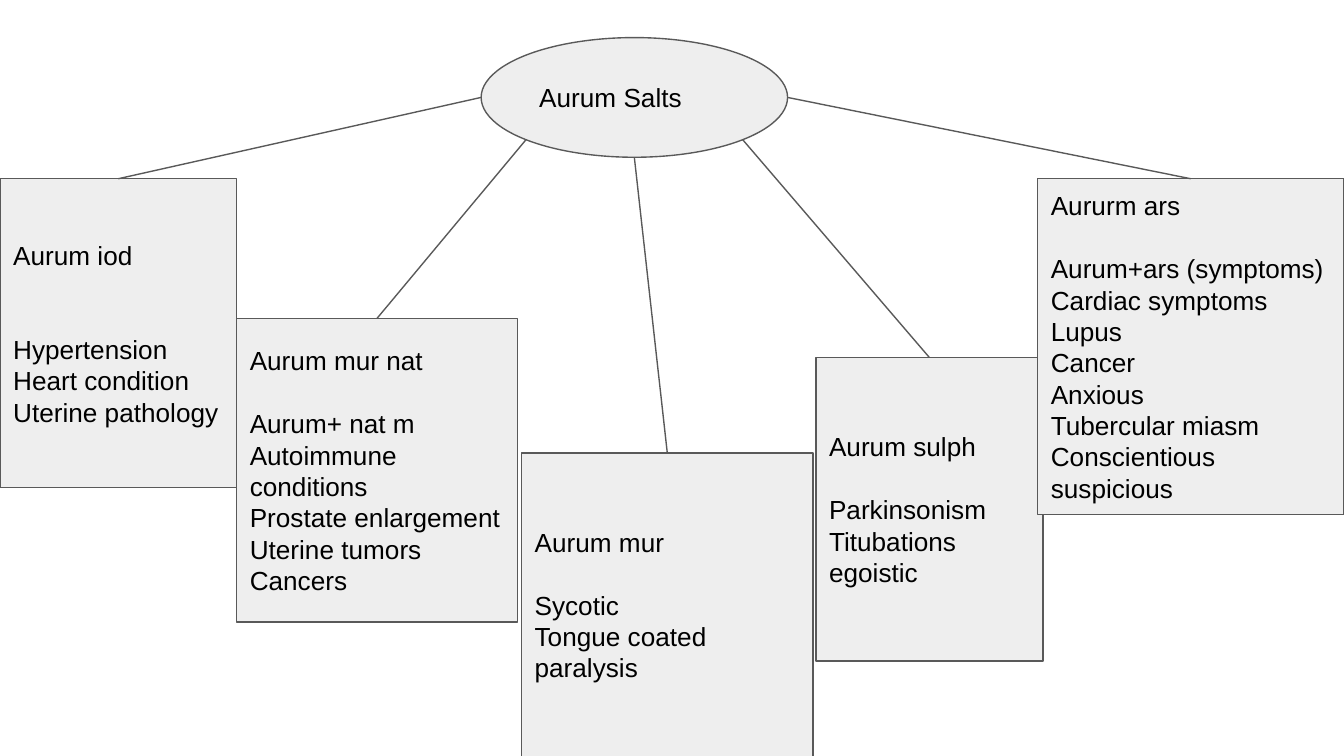
from math import cos, radians, sin

from lxml import etree
from pptx import Presentation
from pptx.dml.color import RGBColor
from pptx.enum.shapes import MSO_CONNECTOR as Connector, MSO_SHAPE as Shape
from pptx.enum.text import MSO_ANCHOR as Anchor, PP_ALIGN as Align
from pptx.oxml.ns import qn
from pptx.util import Inches, Pt

SLIDE_WIDTH = 10
SLIDE_HEIGHT = SLIDE_WIDTH * 9 / 16
COLORS = {"fill": "EEEEEE", "line": "595959", "text": "000000"}
FONT, FONT_SIZE, LINE_HEIGHT = "Arial", 14, 16.8

TOPIC = ("Aurum Salts", (3.58, 0.28, 2.28, 0.89))
SALTS = [
    ("Aurum iod", 2, (0, 1.33, 1.76, 2.3),
     ["Hypertension", "Heart condition", "Uterine pathology"]),
    ("Aurum mur nat", 1, (1.76, 2.37, 2.09, 2.26),
     ["Aurum+ nat m", "Autoimmune conditions", "Prostate enlargement",
      "Uterine tumors", "Cancers"]),
    ("Aurum mur", 1, (3.88, 3.37, 2.17, 2.26),
     ["Sycotic", "Tongue coated", "paralysis"]),
    ("Aurum sulph", 1, (6.07, 2.66, 1.69, 2.26),
     ["Parkinsonism", "Titubations", "egoistic"]),
    ("Aururm ars", 1, (7.72, 1.33, 2.28, 2.5),
     ["Aurum+ars (symptoms)", "Cardiac symptoms", "Lupus", "Cancer", "Anxious",
      "Tubercular miasm", "Conscientious", "suspicious"]),
]


def color(name):
    return RGBColor.from_string(COLORS[name])


def style_line(line):
    line.color.rgb = color("line")
    line.width = Pt(0.75)


def add_node(slide, kind, place, lines, gap=0):
    node = slide.shapes.add_shape(kind, *map(Inches, place))
    node.shadow.inherit = False
    node.fill.solid()
    node.fill.fore_color.rgb = color("fill")
    style_line(node.line)
    frame = node.text_frame
    frame.word_wrap = True
    frame.vertical_anchor = Anchor.MIDDLE
    frame.margin_left = frame.margin_right = Inches(0.1)
    frame.margin_top = frame.margin_bottom = Inches(0.1)
    frame.text = "\n".join(lines)
    for paragraph in frame.paragraphs:
        paragraph.alignment = Align.LEFT
        font = paragraph.runs[0].font
        font.name, font.size = FONT, Pt(FONT_SIZE)
        font.color.rgb = color("text")
    if gap:
        frame.paragraphs[0].space_after = Pt(gap * LINE_HEIGHT)


def add_branch(slide, start, end):
    branch = slide.shapes.add_connector(Connector.STRAIGHT, *map(Inches, start + end))
    style_line(branch.line)
    etree.SubElement(branch.element.find(qn("p:spPr")), qn("a:effectLst"))


def main():
    deck = Presentation()
    deck.slide_width, deck.slide_height = Inches(SLIDE_WIDTH), Inches(SLIDE_HEIGHT)
    slide = deck.slides.add_slide(deck.slide_layouts[6])

    topic, topic_place = TOPIC
    left, top, width, height = topic_place
    add_node(slide, Shape.OVAL, topic_place, [topic])
    for salt, gap, place, symptoms in SALTS:
        add_node(slide, Shape.RECTANGLE, place, [salt] + symptoms, gap)

    step = 180 / (len(SALTS) - 1)
    for i, (_, _, (x, y, w, _), _) in enumerate(SALTS):
        angle = radians(180 - i * step)
        start = (left + width / 2 * (1 + cos(angle)),
                 top + height / 2 * (1 + sin(angle)))
        add_branch(slide, start, (x + w / 2, y))

    deck.save("out.pptx")


if __name__ == "__main__":
    main()
